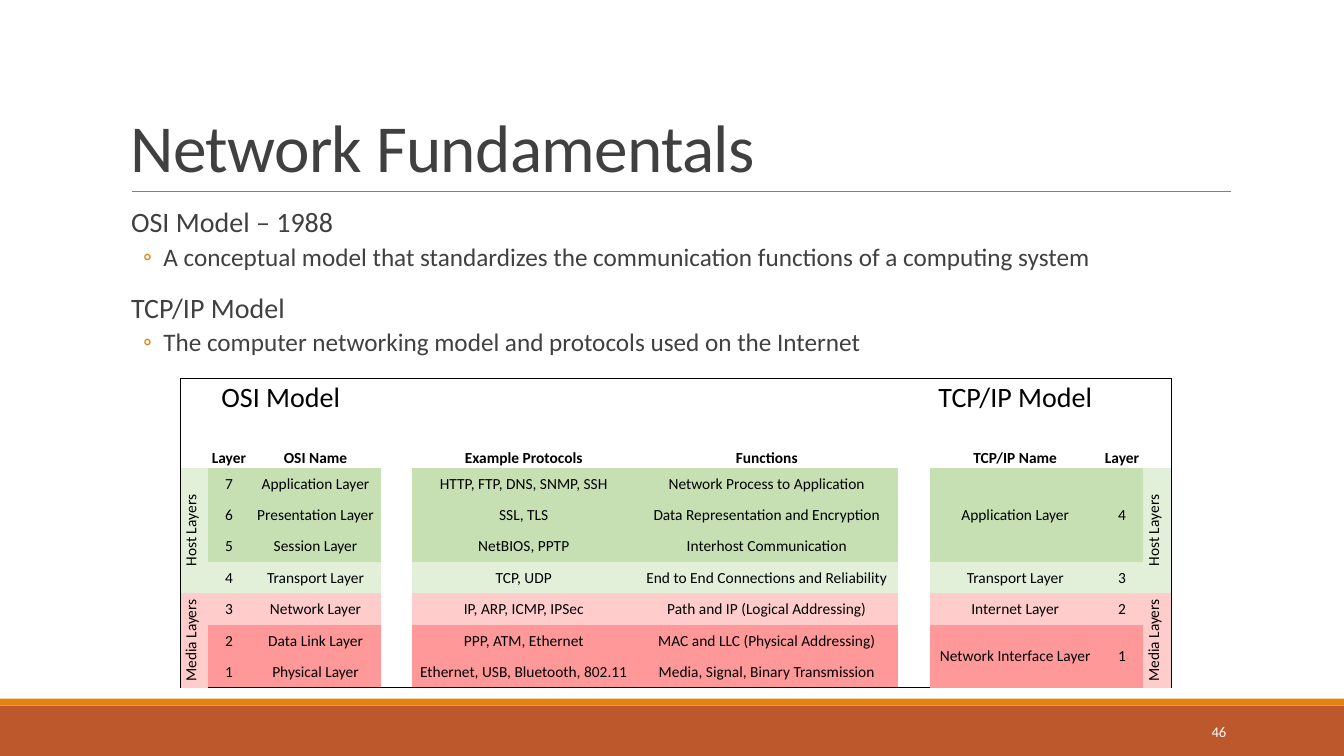
from pptx import Presentation
from pptx.dml.color import RGBColor
from pptx.enum.shapes import MSO_CONNECTOR, MSO_SHAPE
from pptx.enum.text import MSO_ANCHOR, PP_ALIGN
from pptx.oxml.ns import qn
from pptx.util import Inches, Pt
from lxml import etree

RECTANGLE, STRAIGHT = MSO_SHAPE.RECTANGLE, MSO_CONNECTOR.STRAIGHT
TOP, MIDDLE, BOTTOM = MSO_ANCHOR.TOP, MSO_ANCHOR.MIDDLE, MSO_ANCHOR.BOTTOM
LEFT, CENTER, RIGHT = PP_ALIGN.LEFT, PP_ALIGN.CENTER, PP_ALIGN.RIGHT

RUST = RGBColor(0xBD, 0x58, 0x2C)
ORANGE = RGBColor(0xE4, 0x83, 0x12)
GRAY = RGBColor(0x80, 0x80, 0x80)
CHARCOAL = RGBColor(0x40, 0x40, 0x40)
BLACK = RGBColor(0, 0, 0)
WHITE = RGBColor(0xFF, 0xFF, 0xFF)
GREEN = RGBColor(0xC6, 0xE0, 0xB4)
PALE_GREEN = RGBColor(0xE2, 0xEF, 0xD9)
PINK = RGBColor(0xFF, 0xCC, 0xCC)
RED = RGBColor(0xFF, 0x99, 0x99)

FONT = "Calibri"
WIDTH, HEIGHT = Inches(13.33), Inches(7.5)
NO_STYLE = "{2D5ABB26-0587-4C30-8999-92F81FD0307C}"

HEADING = {"size": 20, "before": 12, "after": 2, "margin": 0.1, "indent": 0, "bullet": None}
DETAIL = {"size": 18, "before": 2, "after": 4, "margin": 0.42, "indent": -0.2, "bullet": "◦"}
BODY = [
    ("OSI Model – 1988", HEADING),
    ("A conceptual model that standardizes the communication functions of a computing system", DETAIL),
    ("TCP/IP Model", HEADING),
    ("The computer networking model and protocols used on the Internet", DETAIL),
]

COLUMNS = [2.03, 3.15, 9.75, 2.33, 16.58, 19.58, 2.33, 12.75, 3.15, 2.1]
ROWS = [4.8, 2.8] + [4.16] * 8
FIRST_LAYER = 3
TEXT_COLUMNS = [1, 2, 4, 5, 7, 8]
HEADERS = ["Layer", "OSI Name", "Example Protocols", "Functions", "TCP/IP Name", "Layer"]
LAYERS = [
    (GREEN, "7", "Application Layer", "HTTP, FTP, DNS, SNMP, SSH",
     "Network Process to Application", "Application Layer", "4"),
    (GREEN, "6", "Presentation Layer", "SSL, TLS", "Data Representation and Encryption", "", ""),
    (GREEN, "5", "Session Layer", "NetBIOS, PPTP", "Interhost Communication", "", ""),
    (PALE_GREEN, "4", "Transport Layer", "TCP, UDP",
     "End to End Connections and Reliability", "Transport Layer", "3"),
    (PINK, "3", "Network Layer", "IP, ARP, ICMP, IPSec",
     "Path and IP (Logical Addressing)", "Internet Layer", "2"),
    (RED, "2", "Data Link Layer", "PPP, ATM, Ethernet",
     "MAC and LLC (Physical Addressing)", "Network Interface Layer", "1"),
    (RED, "1", "Physical Layer", "Ethernet, USB, Bluetooth, 802.11",
     "Media, Signal, Binary Transmission", "", ""),
]
GROUPS = [("Host Layers", 3, 6, PALE_GREEN), ("Media Layers", 7, 9, PINK)]
TCP_SPANS = [(3, 5), (8, 9)]


def across(percent):
    """Turn a percentage of the slide width into a length."""
    return round(WIDTH * percent / 100)


def down(percent):
    """Turn a percentage of the slide height into a length."""
    return round(HEIGHT * percent / 100)


def place(left, top, width, height):
    """Turn percentages of the slide into a position and size."""
    return across(left), down(top), across(width), down(height)


def set_attributes(target, values):
    """Set every attribute named in a dict."""
    for name, value in values.items():
        setattr(target, name, value)


def write(paragraph, text, size, color, align=LEFT, bold=False):
    """Write one formatted run and return it."""
    paragraph.alignment = align
    run = paragraph.add_run()
    run.text = text
    set_attributes(run.font, {"size": Pt(size), "name": FONT, "bold": bold})
    run.font.color.rgb = color
    return run


def add_band(slide, color, *area):
    """Draw a plain filled band."""
    band = slide.shapes.add_shape(RECTANGLE, *place(*area))
    band.shadow.inherit = False
    band.fill.solid()
    band.fill.fore_color.rgb = color
    band.line.fill.background()


def add_rule(slide, left, right, height):
    """Draw the thin horizontal line under the title."""
    rule = slide.shapes.add_connector(
        STRAIGHT, across(left), down(height), across(right), down(height))
    rule.line.color.rgb = GRAY
    rule.line.width = Pt(0.5)
    etree.SubElement(rule._element.spPr, qn("a:effectLst"))


def add_frame(slide, area, anchor):
    """Add a wrapping text box and return its text frame."""
    frame = slide.shapes.add_textbox(*place(*area)).text_frame
    set_attributes(frame, {"word_wrap": True, "vertical_anchor": anchor})
    return frame


def add_body(slide, area):
    """Write the headings and their bulleted details."""
    frame = add_frame(slide, area, TOP)
    set_attributes(frame, {"margin_left": 0, "margin_right": 0})
    for index, (text, style) in enumerate(BODY):
        paragraph = frame.add_paragraph() if index else frame.paragraphs[0]
        write(paragraph, text, style["size"], CHARCOAL)
        set_attributes(paragraph, {"line_spacing": 0.9, "space_before": Pt(style["before"]),
                                   "space_after": Pt(style["after"])})
        properties = paragraph._p.get_or_add_pPr()
        properties.set("marL", str(Inches(style["margin"])))
        properties.set("indent", str(Inches(style["indent"])))
        if style["bullet"]:
            color = etree.SubElement(properties, qn("a:buClr"))
            etree.SubElement(color, qn("a:srgbClr"), val=str(ORANGE))
            etree.SubElement(properties, qn("a:buFont"), typeface=FONT)
            etree.SubElement(properties, qn("a:buChar"), char=style["bullet"])


def fill_cell(cell, text, color=None, size=11, bold=False, anchor=MIDDLE):
    """Write and colour one table cell."""
    cell.vertical_anchor = anchor
    if text:
        write(cell.text_frame.paragraphs[0], text, size, BLACK, CENTER, bold)
    if color is not None:
        cell.fill.solid()
        cell.fill.fore_color.rgb = color


def prepare_cells(table):
    """Clear every cell and border the outside of the table."""
    last_row, last_column = len(ROWS) - 1, len(COLUMNS) - 1
    for row in range(len(ROWS)):
        for column in range(len(COLUMNS)):
            cell = table.cell(row, column)
            set_attributes(cell, {"margin_left": Inches(0.01), "margin_right": Inches(0.01),
                                  "margin_top": Inches(0.01), "margin_bottom": 0})
            cell.text_frame.paragraphs[0]._p.get_or_add_endParaRPr().set("sz", "800")
            edges = {"L": column == 0, "R": column == last_column,
                     "T": row == 0, "B": row == last_row}
            for side, outside in edges.items():
                if outside:
                    line = etree.SubElement(cell._tc.get_or_add_tcPr(), qn(f"a:ln{side}"),
                                            w=str(Pt(0.5)))
                    solid = etree.SubElement(line, qn("a:solidFill"))
                    etree.SubElement(solid, qn("a:srgbClr"), val=str(BLACK))
            cell.fill.background()


def add_layer_table(slide, left, top):
    """Build the table that compares the two models."""
    area = place(left, top, sum(COLUMNS), sum(ROWS))
    table = slide.shapes.add_table(len(ROWS), len(COLUMNS), *area).table
    set_attributes(table, {"first_row": False, "horz_banding": False})
    table._tbl.tblPr.find(qn("a:tableStyleId")).text = NO_STYLE
    for column, width in zip(table.columns, COLUMNS):
        column.width = across(width)
    for row, height in zip(table.rows, ROWS):
        row.height = down(height)
    prepare_cells(table)
    table.cell(0, 0).merge(table.cell(0, 2))
    for column, model in ((0, "OSI Model"), (7, "TCP/IP Model")):
        fill_cell(table.cell(0, column), model, size=20, anchor=BOTTOM)
    for column, header in zip(TEXT_COLUMNS, HEADERS):
        fill_cell(table.cell(2, column), header, bold=True, anchor=BOTTOM)
    for row, (color, *texts) in enumerate(LAYERS, FIRST_LAYER):
        for column, text in zip(TEXT_COLUMNS, texts):
            fill_cell(table.cell(row, column), text, color)
    for first, last in TCP_SPANS:
        for column in TEXT_COLUMNS[-2:]:
            table.cell(first, column).merge(table.cell(last, column))
    for name, first, last, color in GROUPS:
        for column in (0, len(COLUMNS) - 1):
            cell = table.cell(first, column)
            cell.merge(table.cell(last, column))
            fill_cell(cell, name, color)
            cell._tc.get_or_add_tcPr().set("vert", "vert270")


def main():
    """Build and save the slide."""
    presentation = Presentation()
    set_attributes(presentation, {"slide_width": WIDTH, "slide_height": HEIGHT})
    slide = presentation.slides.add_slide(presentation.slide_layouts[6])
    add_band(slide, RUST, 0, 93.33, 100, 6.67)
    add_band(slide, ORANGE, 0, 92.4, 100, 0.93)
    add_rule(slide, 9.83, 91.6, 25.33)
    title = add_frame(slide, (9, 4.13, 82.5, 21.2), BOTTOM).paragraphs[0]
    title.line_spacing = 0.85
    run = write(title, "Network Fundamentals", 48, CHARCOAL)
    run._r.get_or_add_rPr().set("spc", "-50")
    add_body(slide, (9, 26.93, 82.5, 58.67))
    add_layer_table(slide, 13.43, 50.1)
    number = add_frame(slide, (81.25, 94.13, 10.73, 5.33), MIDDLE).paragraphs[0]
    write(number, "46", 10.5, WHITE, RIGHT)
    presentation.save("out.pptx")


if __name__ == "__main__":
    main()
